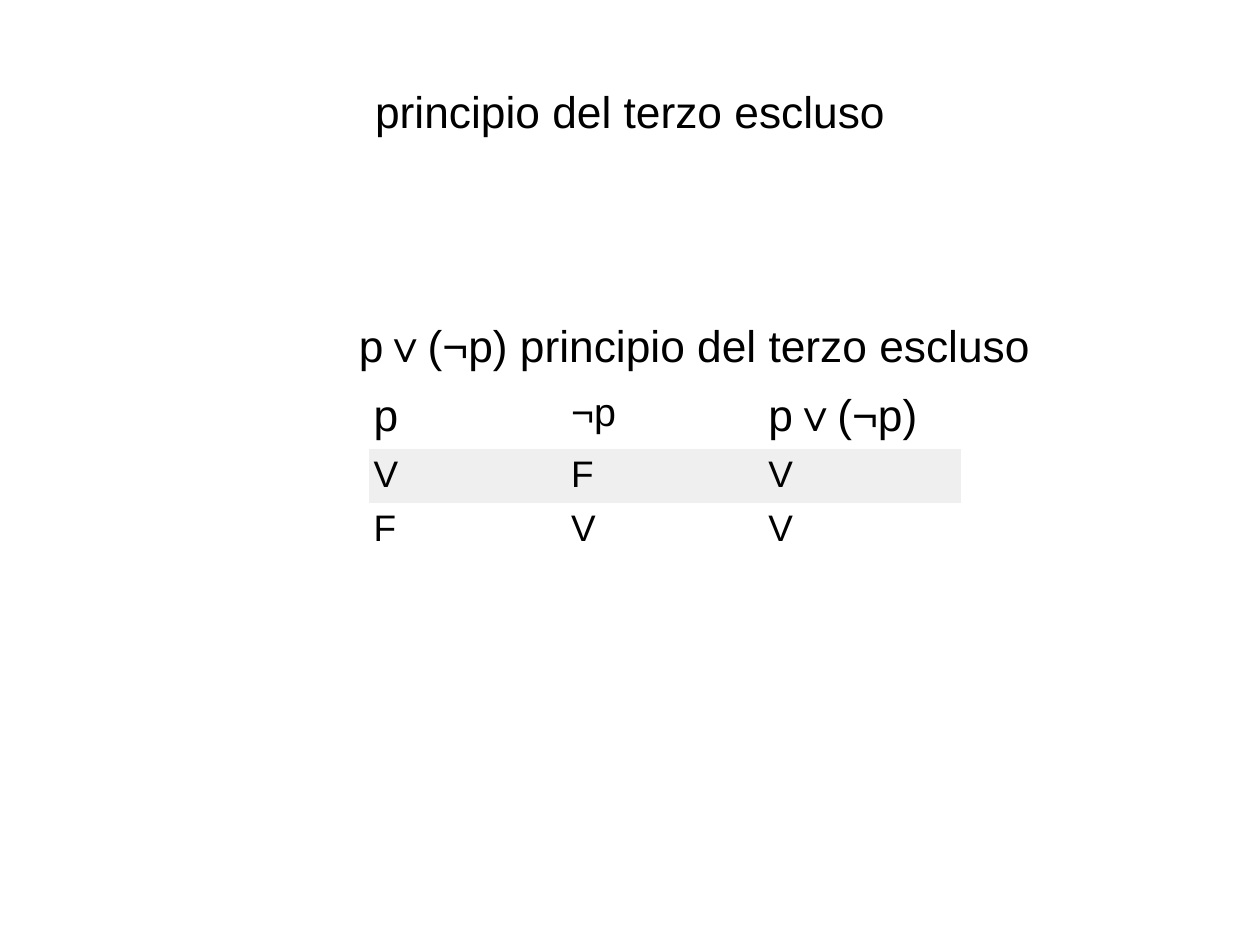
from pptx import Presentation
from pptx.dml.color import RGBColor
from pptx.enum.text import MSO_ANCHOR as Anchor, PP_ALIGN as Align
from pptx.util import Cm, Pt

TITLE = "principio del terzo escluso"
FORMULA = "p∨(¬p)"
STATEMENT = f"{FORMULA} {TITLE}"
TRUTH_TABLE = [
    ("p", "¬p", FORMULA),
    ("V", "F", "V"),
    ("F", "V", "V"),
]
HEADER_SIZES = (36, 32, 36)
VALUE_SIZE = 30
BANDED_ROW = 1

FONT = "Arial"
BLACK = "000000"
BAND = "EFEFEF"
NO_STYLE_NO_GRID = "{2D5ABB26-0587-4C30-8999-92F81FD0307C}"

COLUMN_WIDTH = Cm(5.66)
ROW_HEIGHT = Cm(0.77)
CELL_MARGIN = Cm(0.14)


def color(hex_value):
    return RGBColor.from_string(hex_value)


def set_margins(target, left=0, top=0, right=0, bottom=0):
    target.margin_left, target.margin_top = left, top
    target.margin_right, target.margin_bottom = right, bottom


def write(frame, text, size=36, align=Align.LEFT, font=FONT, fill=BLACK):
    paragraph = frame.paragraphs[0]
    paragraph.alignment = align
    run = paragraph.add_run()
    run.text = text
    run.font.size = Pt(size)
    run.font.name = font
    run.font.color.rgb = color(fill)


def add_centered_text(slide, text, box, **margins):
    frame = slide.shapes.add_textbox(*box).text_frame
    frame.word_wrap = True
    frame.vertical_anchor = Anchor.MIDDLE
    set_margins(frame, **margins)
    write(frame, text, align=Align.CENTER)


def add_truth_table(slide, left, top):
    rows, columns = len(TRUTH_TABLE), len(TRUTH_TABLE[0])
    shape = slide.shapes.add_table(
        rows, columns, left, top, COLUMN_WIDTH * columns, ROW_HEIGHT * rows)
    shape.element.find(".//{*}tableStyleId").text = NO_STYLE_NO_GRID
    table = shape.table
    table.first_row = table.horz_banding = False
    for row, values in enumerate(TRUTH_TABLE):
        for column, value in enumerate(values):
            cell = table.cell(row, column)
            set_margins(cell, *[CELL_MARGIN] * 4)
            if row == BANDED_ROW:
                cell.fill.solid()
                cell.fill.fore_color.rgb = color(BAND)
            else:
                cell.fill.background()
            size = VALUE_SIZE if row else HEADER_SIZES[column]
            write(cell.text_frame, value, size=size)


def main():
    presentation = Presentation()
    presentation.slide_width, presentation.slide_height = Cm(36.12), Cm(27.1)
    slide = presentation.slides.add_slide(presentation.slide_layouts[6])
    title_box = Cm(2.64), Cm(1.24), Cm(30.84), Cm(3.89)
    statement_box = Cm(3.25), Cm(5.16), Cm(30.84), Cm(16.76)
    add_centered_text(slide, TITLE, title_box)
    add_centered_text(slide, STATEMENT, statement_box,
                      left=Cm(2.47), bottom=Cm(7.3))
    add_truth_table(slide, Cm(10.57), Cm(11.07))
    presentation.save("out.pptx")


if __name__ == "__main__":
    main()
